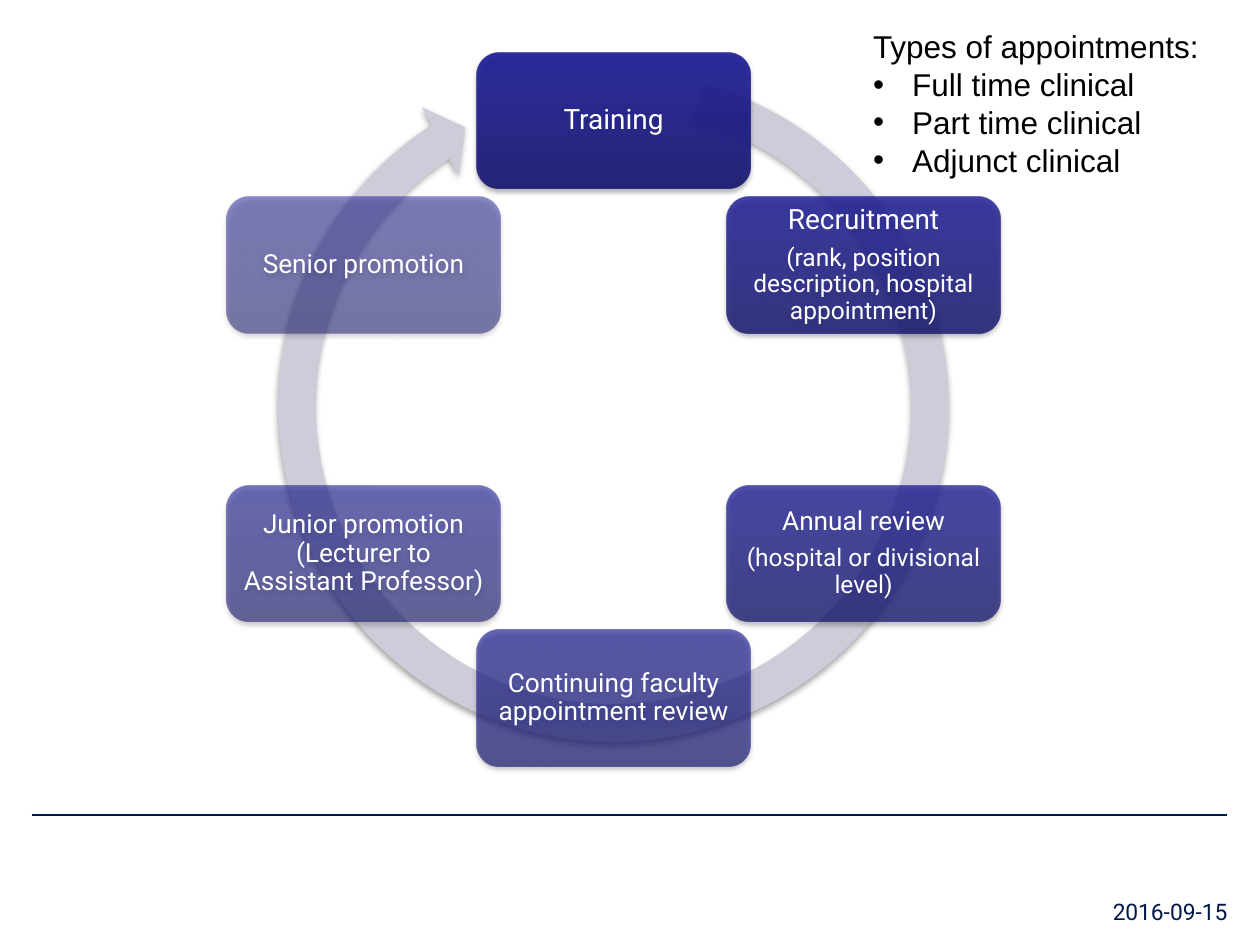
import math

from lxml import etree
from pptx import Presentation
from pptx import util as u
from pptx.dml import color
from pptx.enum import shapes, text
from pptx.oxml import ns

# Content: stages run clockwise from the top, as (text, size) paragraphs
STAGES = [
    [("Training", 16)],
    [("Recruitment", 16),
     ("(rank, position description, hospital appointment)", 14)],
    [("Annual review", 15), ("(hospital or divisional level)", 14)],
    [("Continuing faculty appointment review", 15)],
    [("Junior promotion (Lecturer to Assistant Professor)", 15)],
    [("Senior promotion", 15)],
]
APPOINTMENTS_TITLE = "Types of appointments:"
APPOINTMENTS = ["Full time clinical", "Part time clinical", "Adjunct clinical"]
DATE = "2016-09-15"

# Look and geometry, in cm
NAVY = "001948"
GRADIENT = [(0, "171771"), (80, "1E1E93"), (100, "1C1C96")]
FIRST_ALPHA, ALPHA_STEP = 90, 8
CENTER_X, CENTER_Y, RADIUS = 12.37, 8.25, 5.82
STAGE_W, STAGE_H = 5.52, 2.75
ARROW_SIZE, ARROW_Y = 14.33, 8.2


def rgb(value):
    return color.RGBColor.from_string(value)


def child(parent, tag, **attributes):
    element = etree.SubElement(parent, ns.qn(tag))
    for name, value in attributes.items():
        element.set(name, str(value))
    return element


def add_text(frame, words, size, font="Roboto", fill="FFFFFF", align=None,
             line_spacing=None, after=None, bullet=None, indent=0.79):
    first = frame.paragraphs[0]
    paragraph = frame.add_paragraph() if first.runs else first
    if align is not None:
        paragraph.alignment = align
    if line_spacing:
        paragraph.line_spacing = line_spacing
    if after is not None:
        paragraph.space_after = u.Pt(after)
    if bullet:
        properties = paragraph._p.get_or_add_pPr()
        properties.set("marL", str(u.Cm(indent)))
        properties.set("indent", str(u.Cm(-indent)))
        child(properties, "a:buFont", typeface=font)
        child(properties, "a:buChar", char=bullet)
    run = paragraph.add_run()
    run.text = words
    run.font.name, run.font.size = font, u.Pt(size)
    run.font.color.rgb = rgb(fill)


def set_frame(frame, anchor, margin):
    frame.word_wrap = True
    frame.vertical_anchor = anchor
    frame.margin_left = frame.margin_right = u.Cm(margin)
    frame.margin_top = frame.margin_bottom = u.Cm(margin)


def add_centered(parent, kind, x, y, width, height):
    """Add a borderless shape, centred on a point, with a soft drop shadow."""
    shape = parent.add_shape(kind, u.Cm(x - width / 2), u.Cm(y - height / 2),
                             u.Cm(width), u.Cm(height))
    shape.line.fill.background()
    shape.shadow.inherit = False
    effects = shape._element.spPr.find(ns.qn("a:effectLst"))
    shadow = child(effects, "a:outerShdw", blurRad=u.Pt(3.1), dist=u.Pt(1.8),
                   dir=90 * 60000, algn="ctr", rotWithShape=0)
    child(child(shadow, "a:srgbClr", val="000000"), "a:alpha", val=35000)
    return shape


def fill_gradient(shape, alpha):
    shape.fill.gradient()
    shape.fill.gradient_angle = 90
    stops = shape._element.spPr.find(".//" + ns.qn("a:gsLst"))
    for stop in list(stops):
        stops.remove(stop)
    for position, value in GRADIENT:
        stop = child(stops, "a:gs", pos=position * 1000)
        child(child(stop, "a:srgbClr", val=value), "a:alpha", val=alpha * 1000)


def main():
    deck = Presentation()
    deck.slide_width, deck.slide_height = u.Cm(25.4), u.Cm(19.05)
    slide = deck.slides.add_slide(deck.slide_layouts[6])

    # Footer rule and date
    rule = slide.shapes.add_connector(shapes.MSO_CONNECTOR.STRAIGHT, u.Cm(0.64),
                                      u.Cm(16.43), u.Cm(24.74), u.Cm(16.43))
    rule.line.color.rgb, rule.line.width = rgb(NAVY), u.Pt(0.75)
    child(rule._element.spPr, "a:effectLst")
    date = slide.shapes.add_textbox(u.Cm(19.46), u.Cm(17.55), u.Cm(5.28), u.Cm(1.09))
    set_frame(date.text_frame, text.MSO_ANCHOR.BOTTOM, 0)
    add_text(date.text_frame, DATE, 13, fill=NAVY, align=text.PP_ALIGN.RIGHT)

    # Circular arrow; angles are in degrees
    cycle = slide.shapes.add_group_shape().shapes
    arrow = add_centered(cycle, shapes.MSO_SHAPE.CIRCULAR_ARROW,
                         CENTER_X, ARROW_Y, ARROW_SIZE, ARROW_SIZE)
    arrow.fill.solid()
    arrow.fill.fore_color.rgb = rgb("CDCDDA")
    thickness, head_angle, end, start, head_width = 5.3, 5.21, 236.83, 285.63, 5.5
    for index, value in enumerate([thickness / 100, head_angle * 0.6, end * 0.6,
                                   start * 0.6, head_width / 100]):
        arrow.adjustments[index] = value

    # Stages at equal angles, each paler than the one before
    for index, paragraphs in enumerate(STAGES):
        angle = 2 * math.pi * index / len(STAGES)
        stage = add_centered(cycle, shapes.MSO_SHAPE.ROUNDED_RECTANGLE,
                             CENTER_X + RADIUS * math.sin(angle),
                             CENTER_Y - RADIUS * math.cos(angle), STAGE_W, STAGE_H)
        fill_gradient(stage, FIRST_ALPHA - ALPHA_STEP * index)
        set_frame(stage.text_frame, text.MSO_ANCHOR.MIDDLE, 0.16)
        for words, size in paragraphs:
            add_text(stage.text_frame, words, size, align=text.PP_ALIGN.CENTER,
                     line_spacing=0.9, after=round(size * 0.35, 1))

    # Appointment types
    types = slide.shapes.add_textbox(u.Cm(17.35), u.Cm(0.43), u.Cm(7.14), u.Cm(3.33))
    types.text_frame.word_wrap = False
    add_text(types.text_frame, APPOINTMENTS_TITLE, 18, font="Arial", fill="000000")
    for appointment in APPOINTMENTS:
        add_text(types.text_frame, appointment, 18, font="Arial", fill="000000",
                 bullet="•")

    deck.save("out.pptx")


if __name__ == "__main__":
    main()
